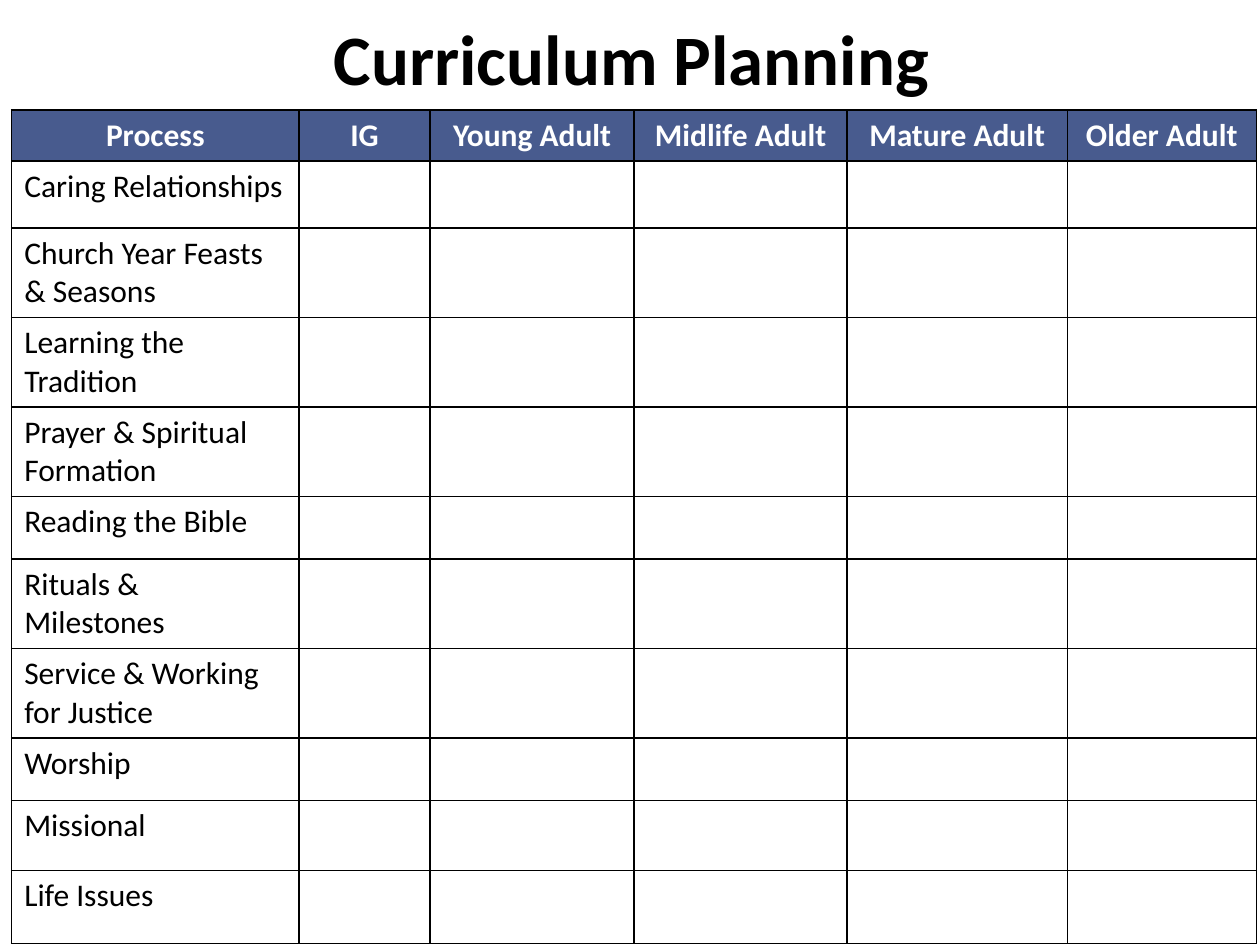
import pptx
import pptx.dml.color
import pptx.enum.text
import pptx.oxml
import pptx.oxml.ns
import pptx.util
from dataclasses import dataclass

Pt = pptx.util.Pt
RGB = pptx.dml.color.RGBColor.from_string
CENTER = pptx.enum.text.PP_ALIGN.CENTER
LEFT = pptx.enum.text.PP_ALIGN.LEFT


@dataclass
class Theme:
    font: str = "Calibri"
    title_size: float = 40.5
    table_size: float = 18
    ink: str = "000000"
    paper: str = "FFFFFF"
    header: str = "485B8E"


theme = Theme()


def style_paragraph(paragraph, size, color, bold, alignment):
    paragraph.alignment = alignment
    paragraph.font.name = theme.font
    paragraph.font.size = Pt(size)
    paragraph.font.bold = bold
    paragraph.font.color.rgb = RGB(color)
    for run in paragraph.runs:
        run.font.name = theme.font
        run.font.size = Pt(size)
        run.font.bold = bold
        run.font.color.rgb = RGB(color)


def add_borders(cell):
    """Draw a 1 pt line on all four sides; must run before the cell is filled."""
    properties = cell._tc.get_or_add_tcPr()
    for side in ("lnL", "lnR", "lnT", "lnB"):
        properties.append(pptx.oxml.parse_xml(
            f'<a:{side} {pptx.oxml.ns.nsdecls("a")} w="{Pt(1)}"><a:solidFill>'
            f'<a:srgbClr val="{theme.ink}"/></a:solidFill></a:{side}>'))


age_groups = ["IG", "Young Adult", "Midlife Adult", "Mature Adult", "Older Adult"]
processes = [
    ("Caring Relationships", 38.2),
    ("Church Year Feasts & Seasons", 51.1),
    ("Learning the Tradition", 51.1),
    ("Prayer & Spiritual Formation", 51.1),
    ("Reading the Bible", 35.8),
    ("Rituals & Milestones", 33.1),
    ("Service & Working for Justice", 51.1),
    ("Worship", 35.6),
    ("Missional", 40),
    ("Life Issues", 41.7),
]
column_widths = [164.16, 75, 116.6, 121.7, 125.8, 108]
row_heights = [29.2] + [height for _, height in processes]
rows = [["Process"] + age_groups]
rows += [[process] + [""] * len(age_groups) for process, _ in processes]

deck = pptx.Presentation()
deck.slide_width, deck.slide_height = Pt(720), Pt(540)
slide = deck.slides.add_slide(deck.slide_layouts[6])

plan = slide.shapes.add_table(
    len(rows), len(column_widths), Pt(6.7), Pt(62.8),
    Pt(sum(column_widths)), Pt(sum(row_heights))).table
for column, width in zip(plan.columns, column_widths):
    column.width = Pt(width)
for row, height in zip(plan.rows, row_heights):
    row.height = Pt(height)

for r, labels in enumerate(rows):
    is_header = r == 0
    for c, label in enumerate(labels):
        cell = plan.cell(r, c)
        add_borders(cell)
        cell.fill.solid()
        cell.fill.fore_color.rgb = RGB(theme.header if is_header else theme.paper)
        cell.text_frame.text = label
        style_paragraph(cell.text_frame.paragraphs[0], theme.table_size,
                        theme.paper if is_header else theme.ink,
                        is_header, CENTER if is_header else LEFT)

title = slide.shapes.add_textbox(Pt(38.2), Pt(2.9), Pt(642.2), Pt(59)).text_frame
title.word_wrap = True
title.vertical_anchor = pptx.enum.text.MSO_ANCHOR.MIDDLE
title.margin_left = Pt(7.2)
title.margin_right = title.margin_top = title.margin_bottom = Pt(3.6)
title.text = "Curriculum Planning"
style_paragraph(title.paragraphs[0], theme.title_size, theme.ink, True, CENTER)

deck.save("out.pptx")
